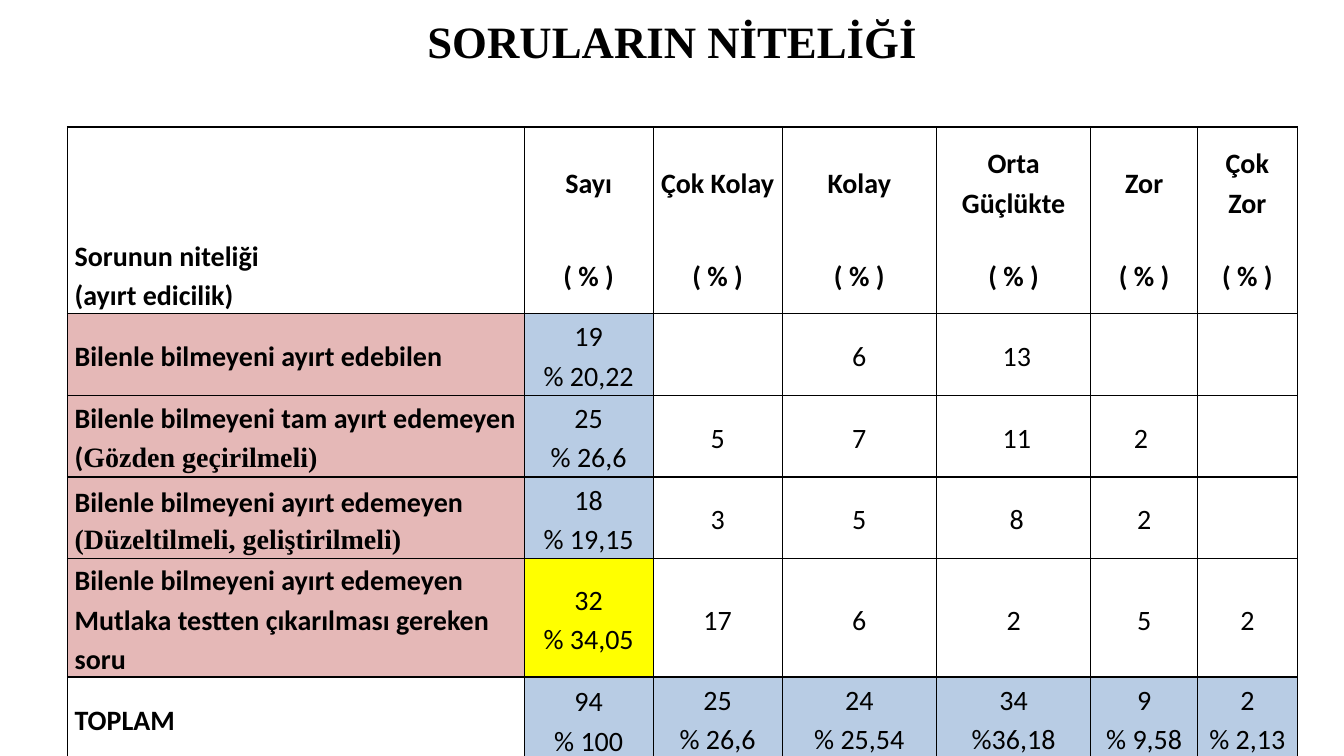
from dataclasses import dataclass

from lxml import etree
from pptx import Presentation
from pptx.dml.color import RGBColor
from pptx.enum.text import MSO_ANCHOR, PP_ALIGN
from pptx.oxml.ns import qn
from pptx.util import Cm, Pt

LEFT, CENTER = PP_ALIGN.LEFT, PP_ALIGN.CENTER
MIDDLE, BOTTOM = MSO_ANCHOR.MIDDLE, MSO_ANCHOR.BOTTOM


@dataclass
class Theme:
    black: str = "000000"
    pink: str = "E5B8B7"
    blue: str = "B8CCE4"
    yellow: str = "FFFF00"
    title_font: str = "Times New Roman"
    body_font: str = "Calibri"
    title_size: int = 32
    body_size: int = 20
    border: int = 1


theme = Theme()


def style_run(r, font, size, bold):
    r.font.name, r.font.size, r.font.bold = font, Pt(size), bold
    r.font.color.rgb = RGBColor.from_string(theme.black)


def add_border(cell, side, visible):
    ln = etree.SubElement(cell._tc.get_or_add_tcPr(), qn("a:ln" + side),
                          w=str(Pt(theme.border)))
    if visible:
        fill = etree.SubElement(ln, qn("a:solidFill"))
        etree.SubElement(fill, qn("a:srgbClr"), val=theme.black)
    else:
        etree.SubElement(ln, qn("a:noFill"))


prs = Presentation()
prs.slide_width, prs.slide_height = Cm(33.87), Cm(19.05)
s = prs.slides.add_slide(prs.slide_layouts[6])

# Title
tf = s.shapes.add_textbox(Cm(1.7), Cm(0), Cm(30.48), Cm(2.06)).text_frame
tf.word_wrap = True
tf.vertical_anchor = MIDDLE
tf.text = "SORULARIN NİTELİĞİ"
tf.paragraphs[0].alignment = CENTER
style_run(tf.paragraphs[0].runs[0], theme.title_font, theme.title_size, True)

# Table content
rows = [
    ["Sorunun niteliği\n(ayırt edicilik)", "Sayı", "Çok Kolay", "Kolay",
     "Orta\nGüçlükte", "Zor", "Çok\nZor"],
    [""] + ["( % )"] * 6,
    ["Bilenle bilmeyeni ayırt edebilen", "19\n% 20,22", "", "6", " 13", "", ""],
    ["Bilenle bilmeyeni tam ayırt edemeyen\n(Gözden geçirilmeli)",
     "25\n% 26,6", "5", "7", " 11", "2 ", ""],
    ["Bilenle bilmeyeni ayırt edemeyen\n(Düzeltilmeli, geliştirilmeli)",
     "18\n% 19,15", "3", "5", " 8", "2", ""],
    ["Bilenle bilmeyeni ayırt edemeyen\nMutlaka testten çıkarılması gereken soru",
     "32\n% 34,05", "17", "6", "2", "5", "2"],
    ["TOPLAM", "94\n% 100", "25\n% 26,6", "24\n% 25,54", "34\n%36,18",
     "9\n% 9,58", "2\n% 2,13"],
]
col_widths = [11.51, 3.25, 3.25, 3.89, 3.89, 2.69, 2.51]
row_heights = [2.75, 1.88, 2.06, 2.06, 2.06, 2.98, 2.06]
header_rows, total_row = 2, len(rows) - 1

# Cell fills: pink labels, blue counts and totals, one yellow warning
fills = {(row, 0): theme.pink for row in range(header_rows, total_row)}
fills |= {(row, 1): theme.blue for row in range(header_rows, total_row)}
fills |= {(total_row, col): theme.blue for col in range(1, len(col_widths))}
fills[5, 1] = theme.yellow

# Table
table = s.shapes.add_table(len(rows), len(col_widths), Cm(1.7), Cm(3.2),
                           Cm(sum(col_widths)), Cm(sum(row_heights))).table
table.first_row = table.horz_banding = False
for column, width in zip(table.columns, col_widths):
    column.width = Cm(width)
for row, height in zip(table.rows, row_heights):
    row.height = Cm(height)
table.cell(0, 0).merge(table.cell(1, 0))

for row, texts in enumerate(rows):
    for col, text in enumerate(texts):
        cell = table.cell(row, col)
        cell.margin_left = cell.margin_right = Cm(0.18)
        cell.margin_top = cell.margin_bottom = 0
        at_bottom = (row, col) in ((0, 0), (total_row, 1))
        cell.vertical_anchor = BOTTOM if at_bottom else MIDDLE

        # The two header rows share no line
        for side in "LRTB":
            add_border(cell, side, (row, side) not in ((0, "B"), (1, "T")))
        if (row, col) in fills:
            cell.fill.solid()
            cell.fill.fore_color.rgb = RGBColor.from_string(fills[row, col])
        else:
            cell.fill.background()

        cell.text_frame.text = text
        for p in cell.text_frame.paragraphs:
            p.alignment = CENTER if col else LEFT
            p.line_spacing = 1.15
            for r in p.runs:
                style_run(r, theme.body_font, theme.body_size,
                          col == 0 or row < header_rows)

# Serif notes under two of the labels
table.cell(4, 0).text_frame.paragraphs[1].runs[0].font.name = theme.title_font
p = table.cell(3, 0).text_frame.paragraphs[1]
p.runs[0].text = "("
r = p.add_run()
r.text = "Gözden geçirilmeli)"
style_run(r, theme.title_font, theme.body_size, True)

prs.save("out.pptx")
